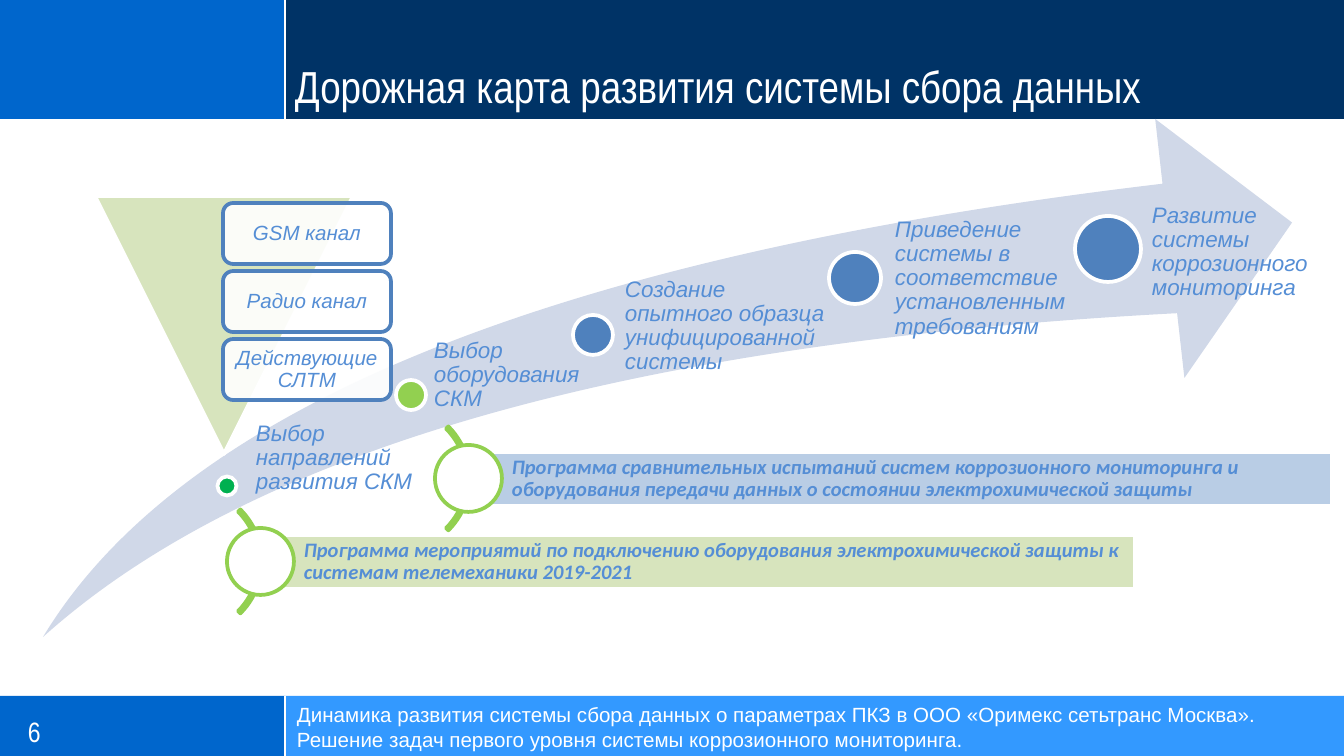
from lxml import etree
from pptx import Presentation
from pptx.dml.color import RGBColor
from pptx.enum.shapes import MSO_CONNECTOR, MSO_SHAPE
from pptx.enum.text import MSO_ANCHOR, PP_ALIGN
from pptx.oxml.ns import qn
from pptx.util import Pt

RECT, OVAL, ROUND = MSO_SHAPE.RECTANGLE, MSO_SHAPE.OVAL, MSO_SHAPE.ROUNDED_RECTANGLE
ARC, SWOOSH, TRI = MSO_SHAPE.BLOCK_ARC, MSO_SHAPE.SWOOSH_ARROW, MSO_SHAPE.ISOSCELES_TRIANGLE
TOP, MID, LOW = MSO_ANCHOR.TOP, MSO_ANCHOR.MIDDLE, MSO_ANCHOR.BOTTOM
LEFT, MIDST = PP_ALIGN.LEFT, PP_ALIGN.CENTER

SCALE = 914400 / 134.4
WIDE, HIGH, SPLIT = 1344, 756, 285
COLORS = {
    "white": "FFFFFF", "blue": "0066CC", "navy": "003366", "sky": "3399FF",
    "swoosh": "D0D8E8", "steel": "4F81BD", "text": "558ED5", "pale": "B9CDE5",
    "olive": "D7E4BD", "lime": "92D050", "green": "00B050",
}
FONTS = {
    "title": {"name": "Arial Narrow", "size": Pt(24)},
    "number": {"name": "Arial Narrow", "size": Pt(15)},
    "foot": {"name": "Arial", "size": Pt(11)},
    "step": {"name": "Arial", "size": Pt(12), "italic": True},
    "card": {"name": "Arial", "size": Pt(11), "italic": True},
    "bar": {"name": "Calibri", "size": Pt(11), "italic": True, "bold": True},
}


def px(n):
    return round(n * SCALE)


def rgb(name):
    return RGBColor.from_string(COLORS[name])


def draw(slide, kind, box, fill=None, line=None, adj=()):
    part = slide.shapes.add_shape(kind, *map(px, box))
    part.shadow.inherit = False
    for i, value in enumerate(adj):
        part.adjustments[i] = value
    if fill:
        part.fill.solid()
        part.fill.fore_color.rgb = rgb(fill)
    else:
        part.fill.background()
    if line:
        part.line.color.rgb = rgb(line)
        part.line.width = Pt(2)
    else:
        part.line.fill.background()
    return part


def write(part, words, font, color="text", pads=(0, 0, 0, 0),
          anchor=TOP, align=LEFT, space=0.9):
    frame = part.text_frame
    sides = ("margin_left", "margin_top", "margin_right", "margin_bottom")
    form = dict(zip(sides, map(px, pads)), word_wrap=True, vertical_anchor=anchor)
    for key, value in form.items():
        setattr(frame, key, value)
    para = frame.paragraphs[0]
    para.alignment, para.line_spacing = align, space
    run = para.add_run()
    run.text = words
    for key, value in FONTS[font].items():
        setattr(run.font, key, value)
    run.font.color.rgb = rgb(color)


def label(slide, box, words, font, **form):
    write(slide.shapes.add_textbox(*map(px, box)), words, font, **form)


def band(slide, box, fill):
    """Two-tone strip with a white divider."""
    x, y, w, h = box
    draw(slide, RECT, (x, y, SPLIT, h), "blue")
    draw(slide, RECT, (x + SPLIT, y, w - SPLIT, h), fill)
    rule = slide.shapes.add_connector(
        MSO_CONNECTOR.STRAIGHT, *map(px, (x + SPLIT, y, x + SPLIT, y + h)))
    rule.line.color.rgb = rgb("white")
    rule.line.width = Pt(1.25)
    etree.SubElement(rule._element.spPr, qn("a:effectLst"))


def header(slide, box, words):
    x, y, w, h = box
    band(slide, box, "navy")
    label(slide, (x + 282, y, w - 282, h), words, "title", color="white",
          pads=(13, 7, 13, 7), anchor=LOW, space=1)


def footer(slide, box, number, words):
    x, y, w, h = box
    band(slide, box, "sky")
    label(slide, (x + 16, y + 14, 285, 46), number, "number",
          color="white", pads=(12, 5, 12, 5), space=1)
    label(slide, (x + SPLIT, y + 6, 1010, 50), words, "foot",
          color="white", pads=(12, 0, 12, 0), space=1)


def roadmap(slide, box, steps):
    """Swoosh with growing dots; each label sits right of its dot."""
    x, y, w, h = box
    draw(slide, SWOOSH, box, "swoosh", adj=(0.25, 0.25))
    for cx, cy, size, fill, dx, dy, wide, words in steps:
        cx, cy = x + cx, y + cy
        draw(slide, OVAL, (cx - size / 2, cy - size / 2, size, size), fill, "white")
        label(slide, (cx + dx, cy + dy, wide, 70), words, "step")


def funnel(slide, box, cards):
    """Inverted triangle with a column of cards over its right half."""
    x, y, w, h = box
    draw(slide, TRI, box, "olive", "white").rotation = 180
    for i, words in enumerate(cards):
        card = draw(slide, ROUND, (x + 128, y + 7 + 68 * i, 168, 61), "white", "steel")
        tint = card._element.spPr.find(qn("a:solidFill"))[0]
        etree.SubElement(tint, qn("a:alpha"), val="90000")
        write(card, words, "card", pads=(10, 10, 10, 10), anchor=MID, align=MIDST)


def program(slide, box, fill, words):
    """Bar with a ring and an arc at its left end."""
    x, y, w, h = box
    draw(slide, ARC, (x - 146, y - 47, 147, 147), line="lime", adj=(189, 27, 0.022))
    bar = draw(slide, RECT, box, fill, "white")
    write(bar, words, "bar", pads=(43, 4, 4, 4), anchor=MID)
    draw(slide, OVAL, (x - 34, y - 7, 67, 67), "white", "lime")


# Dot centre in the swoosh, dot size and fill, label offset and width, wording
STEPS = [
    (184, 367, 19, "green", 29, -64, 160, "Выбор направлений развития СКМ"),
    (368, 276, 30, "lime", 23, -56, 157, "Выбор оборудования СКМ"),
    (550, 216, 40, "steel", 32, -57, 203, "Создание опытного образца унифицированной системы"),
    (812, 159, 52, "steel", 40, -60, 197,
     "Приведение системы в соответствие установленным требованиям"),
    (1065, 130, 66, "steel", 44, -45, 181, "Развитие системы коррозионного мониторинга"),
]
CARDS = ["GSM канал", "Радио канал", "Действующие СЛТМ"]
PLANS = [
    ((469, 452, 863, 54), "pale",
     "Программа сравнительных испытаний систем коррозионного мониторинга "
     "и оборудования передачи данных о состоянии электрохимической защиты"),
    ((261, 535, 874, 54), "olive",
     "Программа мероприятий по подключению оборудования электрохимической "
     "защиты к системам телемеханики 2019-2021"),
]


def main():
    deck = Presentation()
    deck.slide_width, deck.slide_height = px(WIDE), px(HIGH)
    slide = deck.slides.add_slide(deck.slide_layouts[6])
    footer(slide, (0, 696, WIDE, 60), "6",
           "Динамика развития системы сбора данных о параметрах ПКЗ в "
           "ООО «Оримекс сетьтранс Москва». Решение задач первого уровня "
           "системы коррозионного мониторинга.")
    header(slide, (0, 0, WIDE, 119), "Дорожная карта развития системы сбора данных")
    roadmap(slide, (43, 119, 1249, 518), STEPS)
    funnel(slide, (95, 196, 258, 258), CARDS)
    for plan in PLANS:
        program(slide, *plan)
    deck.save("out.pptx")


if __name__ == "__main__":
    main()
